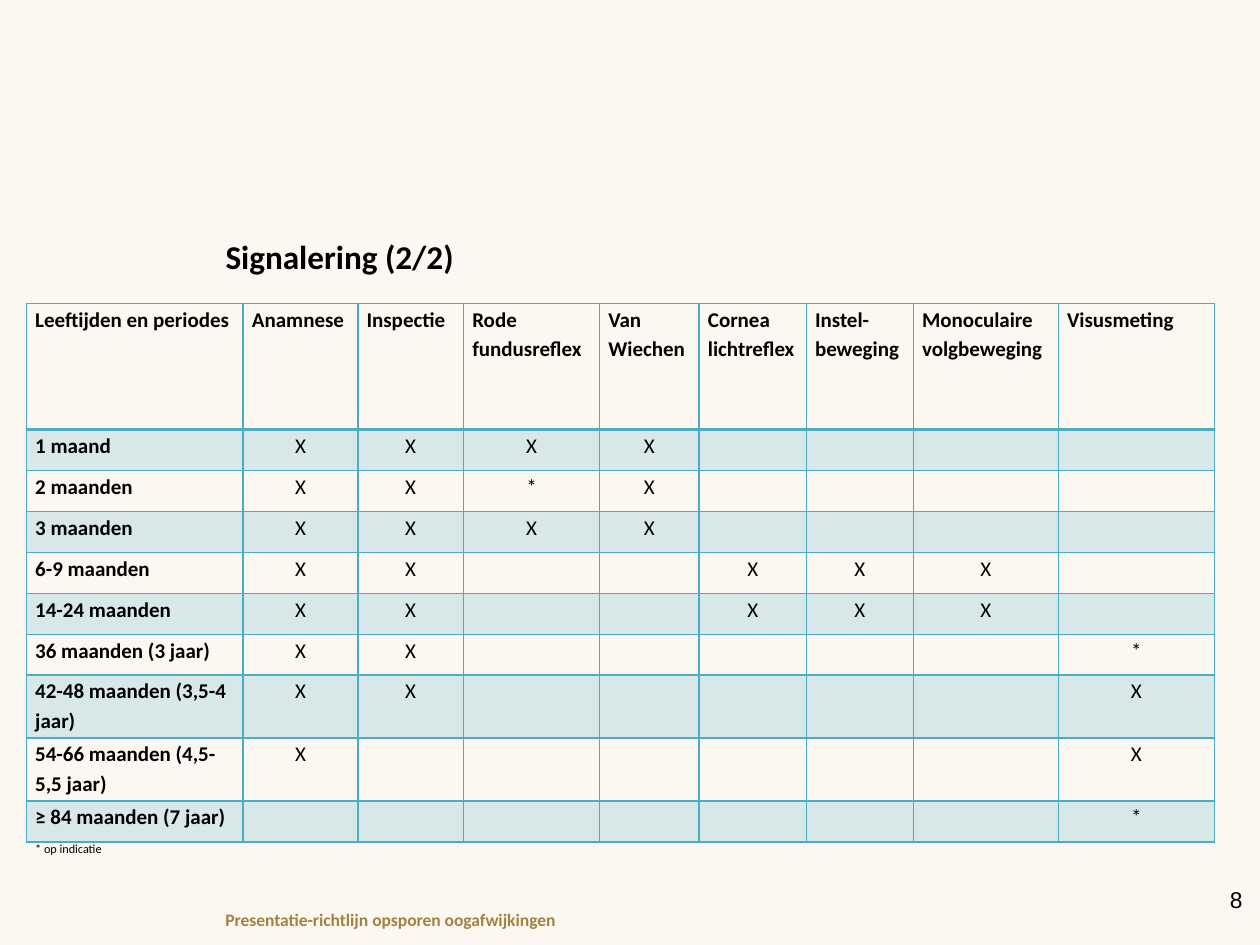
from dataclasses import dataclass

from lxml import etree
from pptx import Presentation
from pptx.dml.color import RGBColor
from pptx.enum.text import MSO_ANCHOR, PP_ALIGN
from pptx.oxml.ns import qn
from pptx.util import Inches, Pt

LEFT, CENTER, RIGHT = PP_ALIGN.LEFT, PP_ALIGN.CENTER, PP_ALIGN.RIGHT
TOP, MIDDLE = MSO_ANCHOR.TOP, MSO_ANCHOR.MIDDLE
NO_STYLE = "{2D5ABB26-0587-4C30-8999-92F81FD0307C}"


@dataclass(frozen=True)
class Theme:
    background: str = "FCF8F1"
    text: str = "000000"
    footer: str = "A08241"
    grid: str = "4BACC6"
    band_alpha: int = 20
    font: str = "Calibri"
    number_font: str = "Arial"
    title_size: int = 19
    table_size: int = 12
    footer_size: int = 10
    number_size: int = 13
    note_size: int = 7


theme = Theme()


def write(tf, text, size, color=theme.text, font=theme.font, bold=False,
          align=LEFT, spacing=None):
    tf.word_wrap = True
    for i, line in enumerate(text.split("\n")):
        p = tf.add_paragraph() if i else tf.paragraphs[0]
        p.alignment = align
        if spacing:
            p.line_spacing = spacing
        p.font.size = Pt(size)
        if line:
            r = p.add_run()
            r.text = line
            r.font.size = Pt(size)
            r.font.name = font
            r.font.bold = bold
            r.font.color.rgb = RGBColor.from_string(color)


def add_border(cell, side, width):
    ln = etree.SubElement(cell._tc.get_or_add_tcPr(), qn(f"a:ln{side}"),
                          w=str(Pt(width)))
    fill = etree.SubElement(ln, qn("a:solidFill"))
    etree.SubElement(fill, qn("a:srgbClr"), val=theme.grid)


prs = Presentation()
prs.slide_width, prs.slide_height = Inches(10), Inches(7.5)
s = prs.slides.add_slide(prs.slide_layouts[5])
s.background.fill.solid()
s.background.fill.fore_color.rgb = RGBColor.from_string(theme.background)

# Title
title = s.shapes.title
title.left, title.top = Inches(1.69), Inches(1.81)
title.width, title.height = Inches(7.81), Inches(0.45)
title.text_frame.vertical_anchor = MIDDLE
write(title.text_frame, "Signalering (2/2)", theme.title_size, bold=True)

# Footer
footer = s.shapes.add_textbox(Inches(1.69), Inches(7.17), Inches(5.64), Inches(0.25))
footer.text_frame.vertical_anchor = MIDDLE
write(footer.text_frame, "Presentatie-richtlijn opsporen oogafwijkingen",
      theme.footer_size, color=theme.footer, bold=True)

# Table: one mark per examination, "-" for none
headers = ["Leeftijden en periodes", "Anamnese", "Inspectie", "Rode fundusreflex",
           "Van Wiechen", "Cornea lichtreflex", "Instel-\nbeweging",
           "Monoculaire volgbeweging", "Visusmeting"]
schedule = [
    ("1 maand", "XXXX----"),
    ("2 maanden", "XX*X----"),
    ("3 maanden", "XXXX----"),
    ("6-9 maanden", "XX--XXX-"),
    ("14-24 maanden", "XX--XXX-"),
    ("36 maanden (3 jaar)", "XX-----*"),
    ("42-48 maanden (3,5-4 jaar)", "XX-----X"),
    ("54-66 maanden (4,5-5,5 jaar)", "X------X"),
    ("≥ 84 maanden (7 jaar)", "-------*"),
]
rows = [headers] + [[age] + [m.replace("-", "") for m in marks]
                    for age, marks in schedule]
col_widths = [1.72, 0.91, 0.84, 1.08, 0.79, 0.85, 0.85, 1.15, 1.24]
row_heights = [1] + [0.325] * 6 + [0.5] * 2 + [0.325, 0.24]

frame = s.shapes.add_table(len(row_heights), len(col_widths), Inches(0.21), Inches(2.41),
                           Inches(sum(col_widths)), Inches(sum(row_heights)))
table = frame.table
table.first_row = table.horz_banding = False
table._tbl.tblPr.find(qn("a:tableStyleId")).text = NO_STYLE
for col, width in zip(table.columns, col_widths):
    col.width = Inches(width)
for row, height in zip(table.rows, row_heights):
    row.height = Inches(height)
for cell in table.iter_cells():
    cell.margin_left = cell.margin_right = Inches(0.07)
    cell.margin_top = cell.margin_bottom = 0

for i, row in enumerate(rows):
    for j, text in enumerate(row):
        cell = table.cell(i, j)
        label = i == 0 or j == 0
        write(cell.text_frame, text, theme.table_size, bold=label,
              align=LEFT if label else CENTER, spacing=1.15)
        for side in "LRTB":
            under_header = (i, side) in ((0, "B"), (1, "T"))
            add_border(cell, side, 2 if under_header else 1)
        if i % 2:
            cell.fill.solid()
            cell.fill.fore_color.rgb = RGBColor.from_string(theme.grid)
            color = cell._tc.tcPr.find(qn("a:solidFill"))[0]
            etree.SubElement(color, qn("a:alpha"), val=str(theme.band_alpha * 1000))
        else:
            cell.fill.background()

# Note in the merged last row
last = len(rows)
note = table.cell(last, 0)
note.merge(table.cell(last, len(headers) - 1))
write(note.text_frame, "* op indicatie", theme.note_size)
for j in range(len(headers)):
    cell = table.cell(last, j)
    add_border(cell, "T", 1)
    cell.fill.background()

# Slide number
number = s.shapes.add_textbox(Inches(9.36), Inches(6.93), Inches(0.6), Inches(0.57))
tf = number.text_frame
tf.margin_top = tf.margin_bottom = Inches(0.1)
tf.vertical_anchor = TOP
write(tf, "8", theme.number_size, font=theme.number_font, align=RIGHT)

prs.save("out.pptx")
